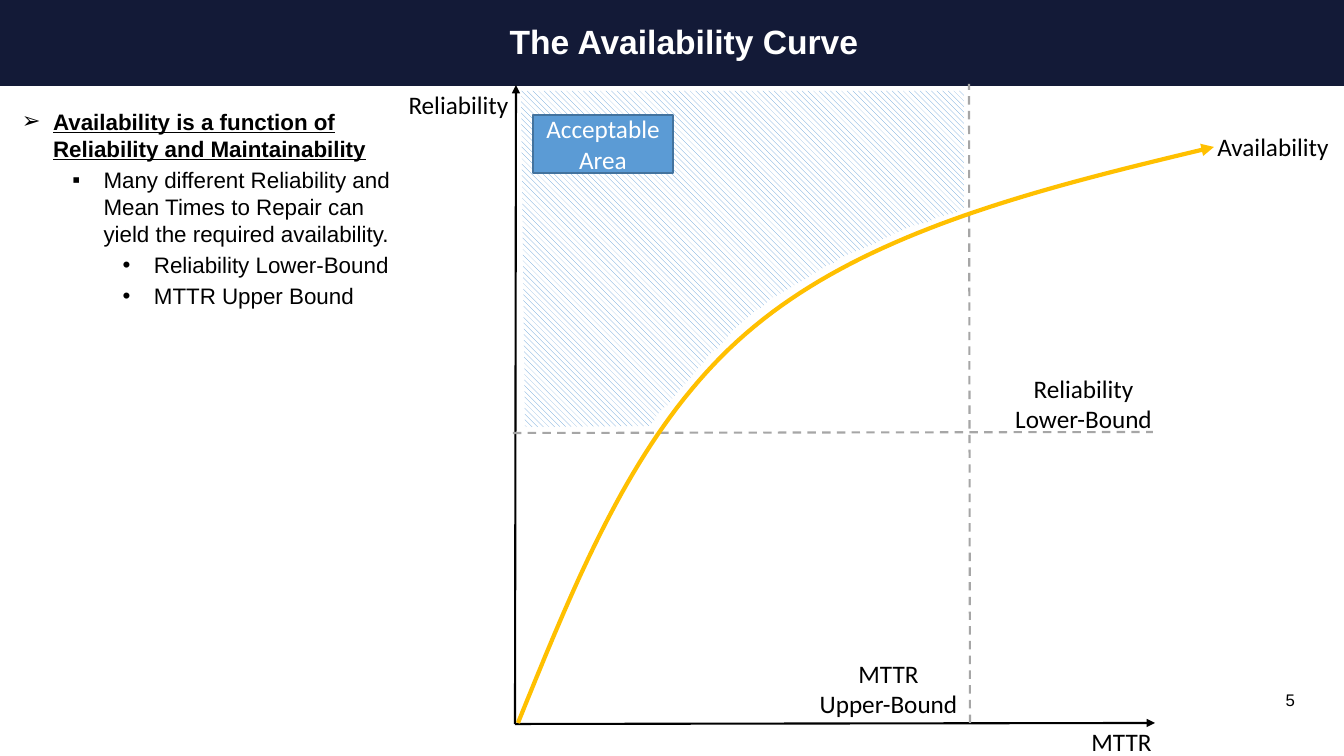
"""Build the availability curve slide."""
from dataclasses import dataclass

from lxml import etree
from pptx import Presentation, util as u
from pptx.dml.color import RGBColor
from pptx.enum import dml, shapes, text
from pptx.oxml.ns import qn

SCALE = 914400 / 100.8
HUES = {"navy": "131A37", "black": "000000", "white": "FFFFFF", "grey": "A6A6A6",
        "gold": "FFC000", "blue": "5B9BD5", "edge": "43739E"}
LEFT, MID, RIGHT = text.PP_ALIGN.LEFT, text.PP_ALIGN.CENTER, text.PP_ALIGN.RIGHT
Point = tuple[float, float]


@dataclass
class Label:
    words: str
    box: tuple[int, int, int, int]


@dataclass
class Rule:
    start: Point
    end: Point
    hue: str
    dash: bool = False


@dataclass
class Item:
    words: str
    level: int
    mark: str
    strong: bool = False


RULES = [
    Rule((515, 724), (516, 85), "black"),
    Rule((515, 724), (1155, 723), "black"),
    Rule((513, 433), (1153, 432), "grey", True),
    Rule((970, 723), (969, 84), "grey", True),
]
LABELS = [
    Label("Availability", (1202, 125, 142, 42)),
    Label("Reliability Lower-Bound", (1002, 369, 163, 69)),
    Label("MTTR\nUpper-Bound", (807, 654, 163, 69)),
    Label("Reliability", (395, 89, 127, 30)),
    Label("MTTR", (1058, 726, 127, 30)),
]
ITEMS = [
    Item("Availability is a function of Reliability and Maintainability", 0, "➢", True),
    Item("Many different Reliability and Mean Times to Repair can yield "
         "the required availability.", 1, "▪"),
    Item("Reliability Lower-Bound", 2, "•"),
    Item("MTTR Upper Bound", 2, "•"),
]
CURVE = [
    ((518, 723), (579, 573), (639, 421), (755, 326)),
    ((755, 326), (871, 230), (1042, 188), (1214, 147)),
]
AREA = [
    (651, 426), (525, 427), (521, 91), (964, 91), (964, 209), (951, 214), (938, 217),
    (928, 222), (912, 226), (896, 233), (883, 239), (876, 243), (859, 250), (840, 258),
    (834, 263), (826, 266), (818, 271), (812, 275), (795, 285), (788, 289), (782, 293),
    (770, 299), (764, 306), (755, 311), (739, 325), (732, 331), (728, 337), (723, 342),
    (718, 348), (710, 354), (703, 363), (691, 377), (677, 393), (668, 405), (660, 411),
]


def px(*sides: float) -> list[int]:
    return [round(side * SCALE) for side in sides]


def hue(name: str) -> RGBColor:
    return RGBColor.from_string(HUES[name])


def style(font, size: int, face: str, tint: str, bold: bool = False, under: bool = False) -> None:
    font.size, font.name, font.bold, font.underline = u.Pt(size), face, bold, under
    font.color.rgb = hue(tint)


def write(frame, words: str, *, size: int = 18, face: str = "Calibri", tint: str = "black",
          bold: bool = False, align=MID) -> None:
    frame.word_wrap = True
    frame.auto_size = text.MSO_AUTO_SIZE.NONE
    frame.vertical_anchor = text.MSO_ANCHOR.MIDDLE
    frame.text = words
    for para in frame.paragraphs:
        para.alignment = align
        for run in para.runs:
            style(run.font, size, face, tint, bold)


def block(slide, box: tuple[int, int, int, int], fill: str, edge: str = ""):
    shape = slide.shapes.add_shape(shapes.MSO_SHAPE.RECTANGLE, *px(*box))
    shape.shadow.inherit = False
    shape.fill.solid()
    shape.fill.fore_color.rgb = hue(fill)
    if edge:
        shape.line.color.rgb = hue(edge)
        shape.line.width = u.Pt(1)
    else:
        shape.line.fill.background()
    return shape


def stroke(shape, tint: str, width: float, dash: bool = False) -> None:
    shape.line.color.rgb = hue(tint)
    shape.line.width = u.Pt(width)
    if dash:
        shape.line.dash_style = dml.MSO_LINE.DASH
    else:
        edge = shape._element.spPr.find(qn("a:ln"))
        etree.SubElement(edge, qn("a:tailEnd"), type="triangle")


def connect(slide, rule: Rule) -> None:
    line = slide.shapes.add_connector(shapes.MSO_CONNECTOR.STRAIGHT, *px(*rule.start, *rule.end))
    stroke(line, rule.hue, 1.5, rule.dash)
    etree.SubElement(line._element.spPr, qn("a:effectLst"))


def trace(slide, points: list[Point], close: bool):
    spots = [px(*point) for point in points]
    pen = slide.shapes.build_freeform(*spots[0])
    pen.add_line_segments(spots[1:], close=close)
    shape = pen.convert_to_shape()
    shape.shadow.inherit = False
    return shape


def bend(parts: list[tuple], steps: int = 40) -> list[Point]:
    points = [parts[0][0]]
    for part in parts:
        for step in range(1, steps + 1):
            t = step / steps
            mix = ((1 - t) ** 3, 3 * t * (1 - t) ** 2, 3 * t * t * (1 - t), t ** 3)
            points.append(tuple(sum(m * p[axis] for m, p in zip(mix, part)) for axis in (0, 1)))
    return points


def outline(slide, items: list[Item]) -> None:
    frame = slide.shapes.add_textbox(*px(12, 103, 413, 217)).text_frame
    frame.word_wrap = True
    for spot, item in enumerate(items):
        para = frame.paragraphs[0] if spot == 0 else frame.add_paragraph()
        para.level = item.level
        props = para._p.get_or_add_pPr()
        props.set("marL", str(u.Inches(0.31 + 0.5 * item.level)))
        props.set("indent", str(u.Inches(-0.31)))
        etree.SubElement(props, qn("a:buFont"), typeface="Arial")
        etree.SubElement(props, qn("a:buChar"), char=item.mark)
        if spot:
            para.space_before = u.Pt(3.2)
        run = para.add_run()
        run.text = item.words
        style(run.font, 16, "Arial", "black", item.strong, item.strong)


def head(slide) -> None:
    title = slide.shapes.title
    title.left, title.top, title.width, title.height = px(61, 11, 1246, 61)
    write(title.text_frame, "The Availability Curve", size=24, face="Arial", tint="white", bold=True)
    props = title.text_frame.paragraphs[0].runs[0].font._element
    glow = etree.Element(qn("a:effectLst"))
    shade = etree.SubElement(glow, qn("a:outerShdw"), blurRad="38100", dist="38100", dir="2700000")
    tone = etree.SubElement(shade, qn("a:srgbClr"), val=HUES["black"])
    etree.SubElement(tone, qn("a:alpha"), val="43000")
    props.find(qn("a:solidFill")).addnext(glow)
    slide.shapes._spTree.append(title._element)


def main() -> None:
    deck = Presentation()
    deck.slide_width, deck.slide_height = px(1344, 756)
    slide = deck.slides.add_slide(deck.slide_layouts[5])
    block(slide, (0, 0, 1344, 86), "navy")
    page = slide.shapes.add_textbox(*px(992, 680, 313, 40))
    write(page.text_frame, "5", size=12, face="Arial", align=RIGHT)
    for rule in RULES:
        connect(slide, rule)
    curve = trace(slide, bend(CURVE), False)
    curve.fill.background()
    stroke(curve, "gold", 3)
    area = trace(slide, AREA, True)
    area.line.fill.background()
    area.fill.patterned()
    area.fill.pattern = dml.MSO_PATTERN.WIDE_DOWNWARD_DIAGONAL
    area.fill.fore_color.rgb = hue("blue")
    area.fill.back_color.rgb = hue("white")
    badge = block(slide, (533, 115, 140, 58), "blue", "edge")
    write(badge.text_frame, "Acceptable Area", tint="white")
    for label in LABELS:
        box = slide.shapes.add_textbox(*px(*label.box))
        write(box.text_frame, label.words)
    outline(slide, ITEMS)
    head(slide)
    deck.save("out.pptx")


if __name__ == "__main__":
    main()
